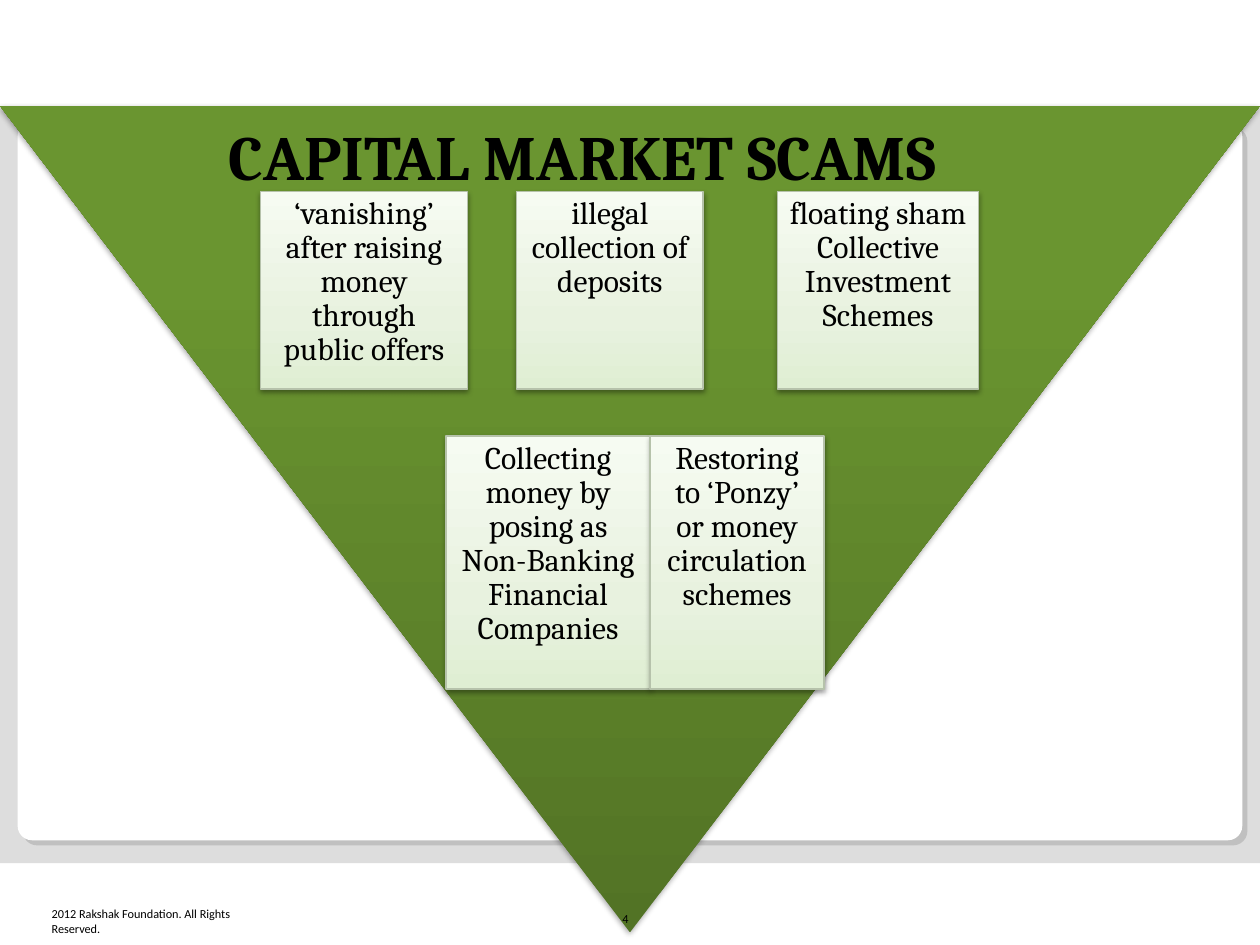
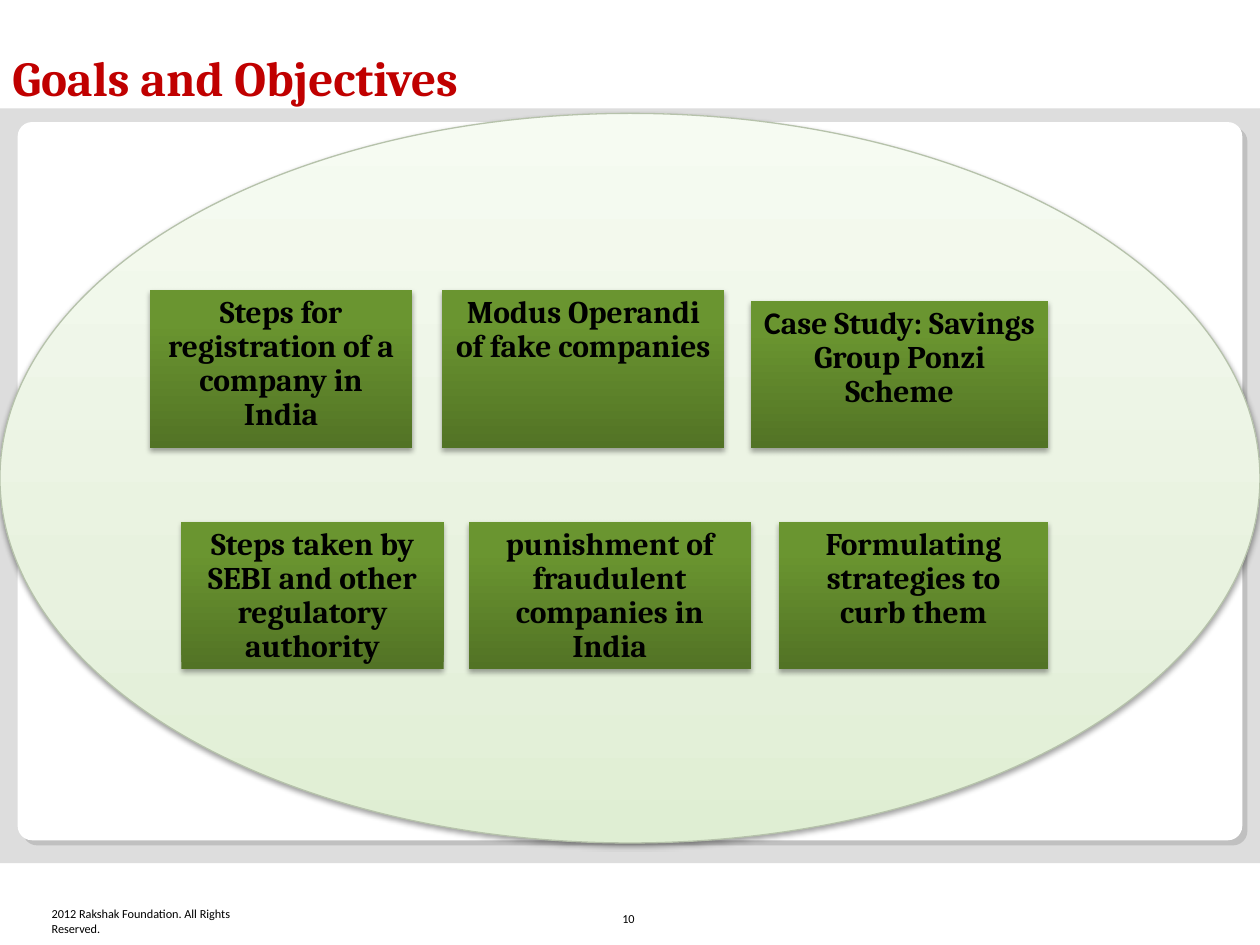
"""Build two slides on capital market scams and the goals of the study."""
import pptx
import pptx.util
import pptx.dml.color
import pptx.enum.shapes
import pptx.enum.text
import pptx.oxml.ns
from lxml import etree

Pt = pptx.util.Pt
RGB = pptx.dml.color.RGBColor
KIND = pptx.enum.shapes.MSO_SHAPE
ALIGN = pptx.enum.text.PP_ALIGN
ANCHOR = pptx.enum.text.MSO_ANCHOR
qn = pptx.oxml.ns.qn

BLACK = RGB(0x00, 0x00, 0x00)
WHITE = RGB(0xFF, 0xFF, 0xFF)
RED = RGB(0xC0, 0x00, 0x00)
BAND = RGB(0xDD, 0xDD, 0xDD)
SHADE = RGB(0xC0, 0xC0, 0xC0)
EDGE = RGB(0xB6, 0xC2, 0xAB)
DEEP = RGB(0x52, 0x73, 0x25)
LEAF = RGB(0x6A, 0x95, 0x30)
MOSS = RGB(0x6B, 0x98, 0x2F)
MINT = RGB(0xDF, 0xEE, 0xD3)
PALE = RGB(0xE8, 0xF2, 0xDF)
MIST = RGB(0xF6, 0xFB, 0xF2)

GREEN = {"stops": [(0, DEEP), (80, LEAF), (100, MOSS)], "edge": None, "alpha": 35, "drop": 1.8}
LIGHT = {"stops": [(0, MINT), (35, PALE), (100, MIST)], "edge": EDGE, "alpha": 38, "drop": 1.6}


def block(slide, kind, box, look):
    """Add a shape filled with a plain colour, or with a gradient look and shadow."""
    shape = slide.shapes.add_shape(kind, *map(Pt, box))
    shape.shadow.inherit = False
    shape.line.fill.background()
    if isinstance(look, RGB):
        shape.fill.solid()
        shape.fill.fore_color.rgb = look
        return shape
    shape.fill.gradient()
    shape.fill.gradient_angle = 90
    ramp = shape.element.spPr.find(".//" + qn("a:gsLst"))
    for stop in list(ramp):
        ramp.remove(stop)
    for pos, color in look["stops"]:
        stop = etree.SubElement(ramp, qn("a:gs"), pos=str(pos * 1000))
        etree.SubElement(stop, qn("a:srgbClr"), val=str(color))
    if look["edge"]:
        shape.line.color.rgb = look["edge"]
        shape.line.width = Pt(0.75)
    glow = etree.SubElement(shape.element.spPr.find(qn("a:effectLst")), qn("a:outerShdw"),
                            blurRad=str(Pt(3.1)), dist=str(Pt(look["drop"])),
                            dir="5400000", rotWithShape="0")
    tint = etree.SubElement(glow, qn("a:srgbClr"), val=str(BLACK))
    etree.SubElement(tint, qn("a:alpha"), val=str(look["alpha"] * 1000))
    return shape


def write(shape, text, lead="", size=18, face="Cambria", color=BLACK, bold=False,
          align=ALIGN.CENTER, anchor=ANCHOR.TOP, space=0.9, wrap=True, inset=None):
    """Put one formatted paragraph in a shape; lead is set in Calibri."""
    frame = shape.text_frame
    frame.word_wrap = wrap
    frame.vertical_anchor = anchor
    if inset is not None:
        frame.margin_left = frame.margin_right = Pt(inset)
        frame.margin_top = frame.margin_bottom = Pt(inset)
    para = frame.paragraphs[0]
    para.alignment = align
    para.line_spacing = space
    for part, name in ((lead, "Calibri"), (text, face)):
        if part:
            run = para.add_run()
            run.text = part
            run.font.name = name
            run.font.size = Pt(size)
            run.font.bold = bold
            run.font.color.rgb = color


SMALL = {"size": 7, "face": "Calibri", "align": ALIGN.LEFT, "anchor": ANCHOR.BOTTOM, "space": 1.0}

PAGES = [
    {
        "page": "4",
        "back": (KIND.FLOWCHART_MERGE, (0, 60.5, 720, 472.3), GREEN),
        "title": ("CAPITAL MARKET SCAMS", (23.8, 41.8, 617.8, 72.7),
                  {"size": 36, "anchor": ANCHOR.BOTTOM}),
        "look": LIGHT,
        "bold": False,
        "rows": [
            (109.4, 113, [
                (149, 118.1, "", "‘vanishing’ after raising money through public offers"),
                (295.2, 106.6, "", "illegal collection of deposits"),
                (444.2, 115.2, "", "floating sham Collective Investment Schemes")]),
            (249.1, 144.7, [
                (254.9, 116.6, "", "Collecting money by posing as Non-Banking Financial Companies"),
                (371.5, 99.4, "", "Restoring to ‘Ponzy’ or money circulation schemes")]),
        ],
    },
    {
        "page": "10",
        "back": (KIND.OVAL, (0, 64.8, 720, 416.9), LIGHT),
        "title": ("Goals and Objectives", (0, 27.4, 281.5, 38.2),
                  {"size": 28, "color": RED, "align": ALIGN.LEFT, "wrap": False}),
        "look": GREEN,
        "bold": True,
        "rows": [
            (165.6, 90.7, [
                (85.7, 149.8, "", "Steps for registration of a company in India"),
                (252.7, 161.3, "", "Modus Operandi of fake companies")]),
            (172.1, 84.2, [
                (429.1, 169.9, "C", "ase Study: Savings Group Ponzi Scheme")]),
            (298.1, 84.2, [
                (103.7, 149.8, "", "Steps taken by SEBI and other regulatory authority"),
                (267.8, 161.3, "", "punishment of fraudulent companies in India"),
                (445, 154.1, "", "Formulating strategies to curb them")]),
        ],
    },
]

deck = pptx.Presentation()
deck.slide_width, deck.slide_height = Pt(720), Pt(540)

for page in PAGES:
    slide = deck.slides.add_slide(deck.slide_layouts[6])
    block(slide, KIND.RECTANGLE, (0, 61.9, 720, 431.3), BAND)
    for left, top, color in ((13, 72.7, SHADE), (10.1, 69.8, WHITE)):
        panel = block(slide, KIND.ROUNDED_RECTANGLE, (left, top, 699.8, 410.4), color)
        panel.adjustments[0] = 0.02
    note = slide.shapes.add_textbox(Pt(29.5), Pt(526.3), Pt(118.8), Pt(8.6))
    write(note, "2012 Rakshak Foundation. All Rights Reserved.", inset=0, **SMALL)

    block(slide, *page["back"])
    count = slide.shapes.add_textbox(Pt(348.5), Pt(508.3), Pt(23), Pt(24.5))
    write(count, page["page"], **SMALL)

    text, box, style = page["title"]
    title = slide.shapes.add_textbox(*map(Pt, box))
    write(title, text, bold=True, **style)

    for top, height, cards in page["rows"]:
        for left, width, lead, text in cards:
            card = block(slide, KIND.RECTANGLE, (left, top, width, height), page["look"])
            write(card, text, lead=lead, bold=page["bold"])

deck.save("out.pptx")
